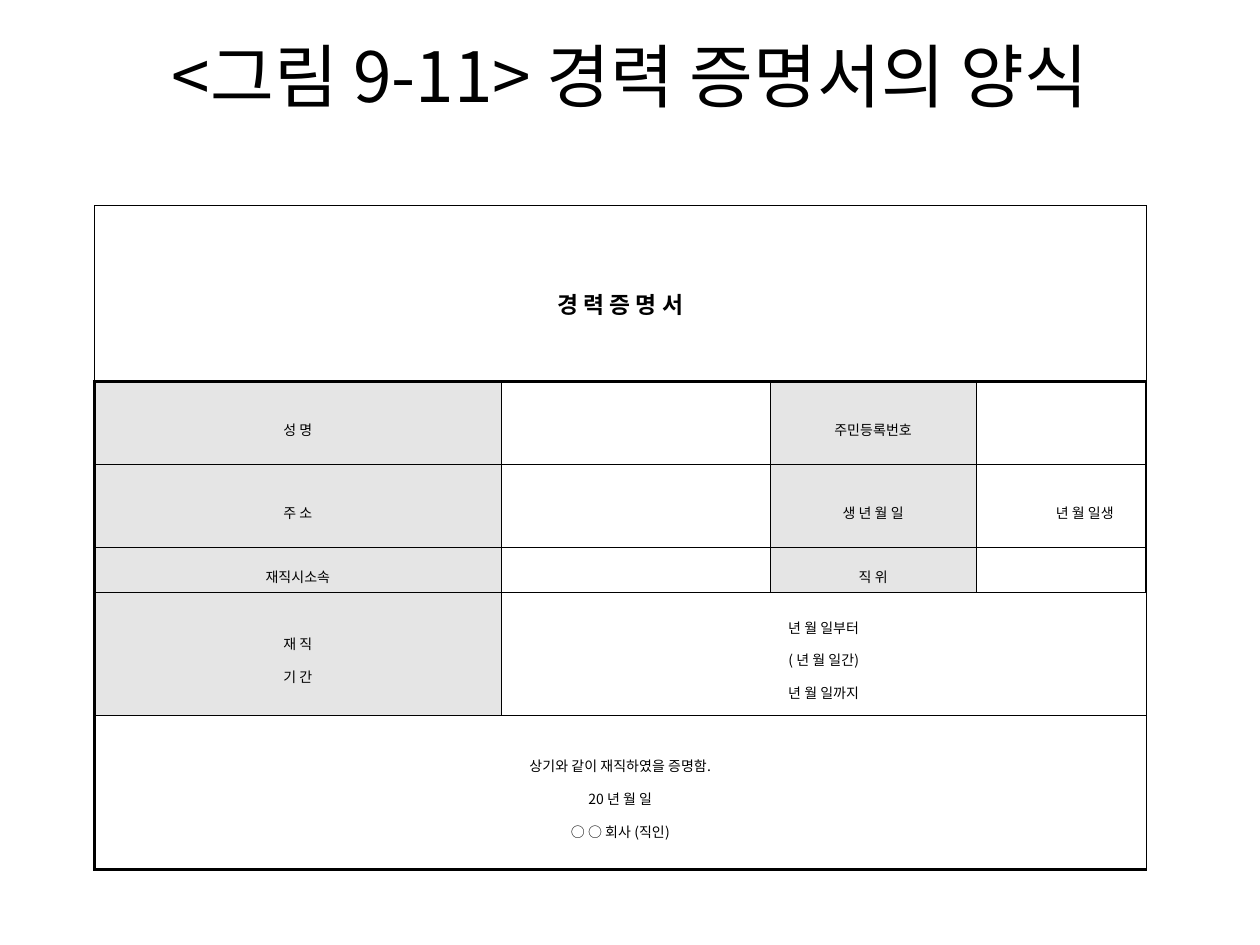
from lxml.etree import SubElement
from pptx import Presentation
from pptx.dml.color import RGBColor
from pptx.enum.text import MSO_ANCHOR, PP_ALIGN
from pptx.oxml.ns import qn
from pptx.util import Pt

FONT = "Noto Sans CJK KR"
BLACK, LABEL_GRAY = "000000", "E5E5E5"
THIN, THICK = 0.28, 1.7

COLUMNS = [232.5, 153.5, 118, 97]
ROWS = [100.5, 47.5, 47.5, 25.5, 70, 88.5]
# (row, column): (columns spanned, lines)
ENTRIES = {
    (0, 0): (4, ["경 력 증 명 서"]),
    (1, 0): (1, ["성 명"]),
    (1, 2): (1, ["주민등록번호"]),
    (2, 0): (1, ["주 소"]),
    (2, 2): (1, ["생 년 월 일"]),
    (2, 3): (1, ["년 월 일생"]),
    (3, 0): (1, ["재직시소속"]),
    (3, 2): (1, ["직 위"]),
    (4, 0): (1, ["재 직", "기 간"]),
    (4, 1): (3, ["년 월 일부터", "( 년 월 일간)", "년 월 일까지"]),
    (5, 0): (4, ["상기와 같이 재직하였을 증명함.", "20 년 월 일", "○ ○ 회사 (직인)"]),
}
LABELS = {(1, 0), (1, 2), (2, 0), (2, 2), (3, 0), (3, 2), (4, 0)}
BIRTH_DATE = (2, 3)


def color(value):
    return RGBColor.from_string(value)


def style(paragraph, size, bold=False, align=PP_ALIGN.CENTER):
    """Set font and alignment, for East Asian text as well."""
    paragraph.alignment = align
    font = paragraph.font
    font.name, font.size, font.bold = FONT, Pt(size), bold
    font.color.rgb = color(BLACK)
    SubElement(font._element, qn("a:ea"), typeface=FONT)


def add_title(slide, left, top, width, height):
    frame = slide.shapes.add_textbox(Pt(left), Pt(top), Pt(width), Pt(height)).text_frame
    frame.word_wrap = True
    frame.vertical_anchor = MSO_ANCHOR.MIDDLE
    frame.text = "<그림 9-11> 경력 증명서의 양식\v"
    style(frame.paragraphs[0], 39.6)


def set_borders(cell, row, column):
    """Thick frame around the form rows, thin lines elsewhere."""
    last_row, last_column = len(ROWS) - 1, len(COLUMNS) - 1
    thick_sides = {
        "L": row > 0 and column == 0,
        "R": row > 0 and column == last_column,
        "T": row == 1,
        "B": row in (0, last_row),
    }
    properties = cell._tc.get_or_add_tcPr()
    for side, thick in thick_sides.items():
        line = SubElement(properties, qn(f"a:ln{side}"), w=str(Pt(THICK if thick else THIN)))
        SubElement(SubElement(line, qn("a:solidFill")), qn("a:srgbClr"), val=BLACK)


def fill_cell(cell, position, lines):
    cell.vertical_anchor = MSO_ANCHOR.MIDDLE
    cell.margin_left = cell.margin_right = Pt(3.6)
    cell.margin_top = cell.margin_bottom = Pt(0.7)
    set_borders(cell, *position)
    if position in LABELS:
        cell.fill.solid()
        cell.fill.fore_color.rgb = color(LABEL_GRAY)
    else:
        cell.fill.background()
    align = PP_ALIGN.CENTER
    if position == BIRTH_DATE:
        align = PP_ALIGN.RIGHT
        cell.margin_right = Pt(18.5)
    heading = position == (0, 0)
    cell.text_frame.text = "\n".join(lines)
    for paragraph in cell.text_frame.paragraphs:
        style(paragraph, 13 if heading else 8, heading, align)
        paragraph.line_spacing = 1.6


def add_certificate(slide, left, top):
    table = slide.shapes.add_table(
        len(ROWS), len(COLUMNS), Pt(left), Pt(top), Pt(sum(COLUMNS)), Pt(sum(ROWS))
    ).table
    table.first_row = table.horz_banding = False
    for column, width in zip(table.columns, COLUMNS):
        column.width = Pt(width)
    for row, height in zip(table.rows, ROWS):
        row.height = Pt(height)
    for row in range(len(ROWS)):
        for column in range(len(COLUMNS)):
            span, lines = ENTRIES.get((row, column), (1, []))
            cell = table.cell(row, column)
            fill_cell(cell, (row, column), lines)
            if span > 1:
                cell.merge(table.cell(row, column + span - 1))


def main():
    deck = Presentation()
    deck.slide_width, deck.slide_height = Pt(720), Pt(540)
    slide = deck.slides.add_slide(deck.slide_layouts[6])
    add_title(slide, 36, 21.6, 648, 90)
    add_certificate(slide, 54, 117.5)
    deck.save("out.pptx")


if __name__ == "__main__":
    main()
